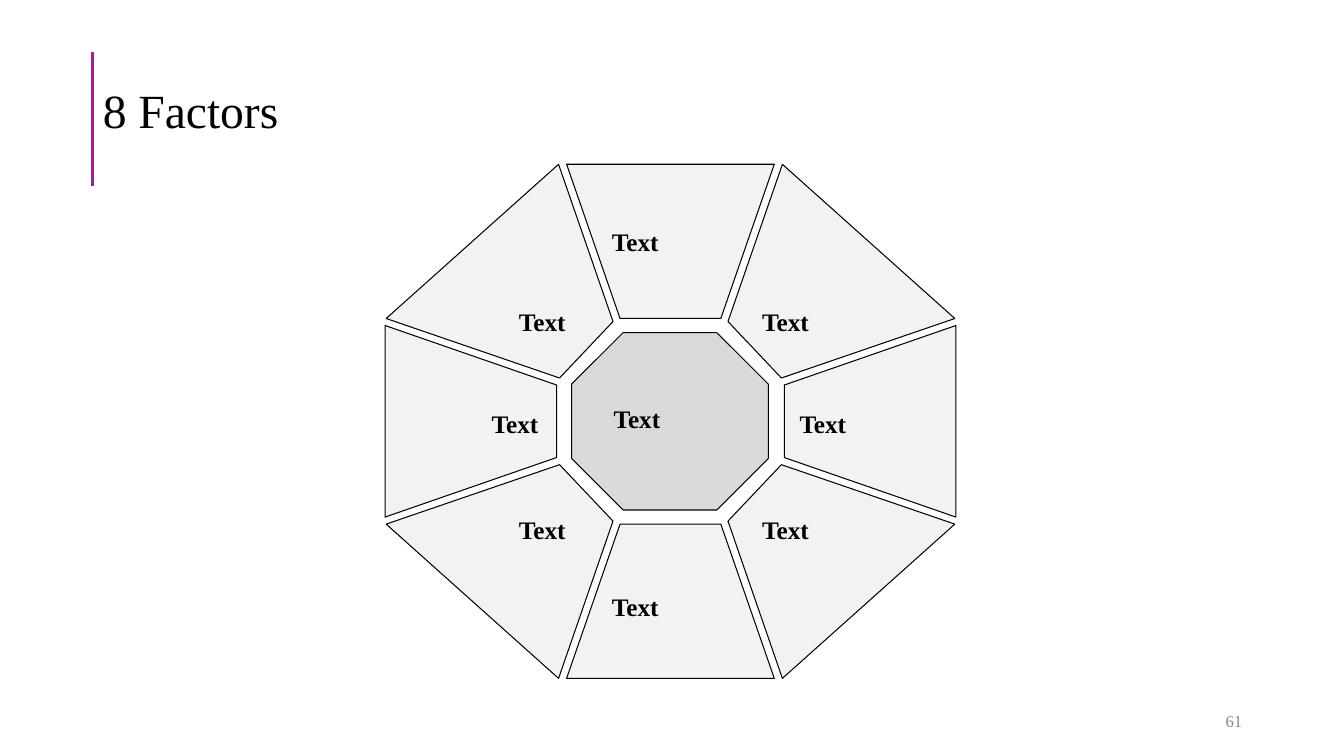
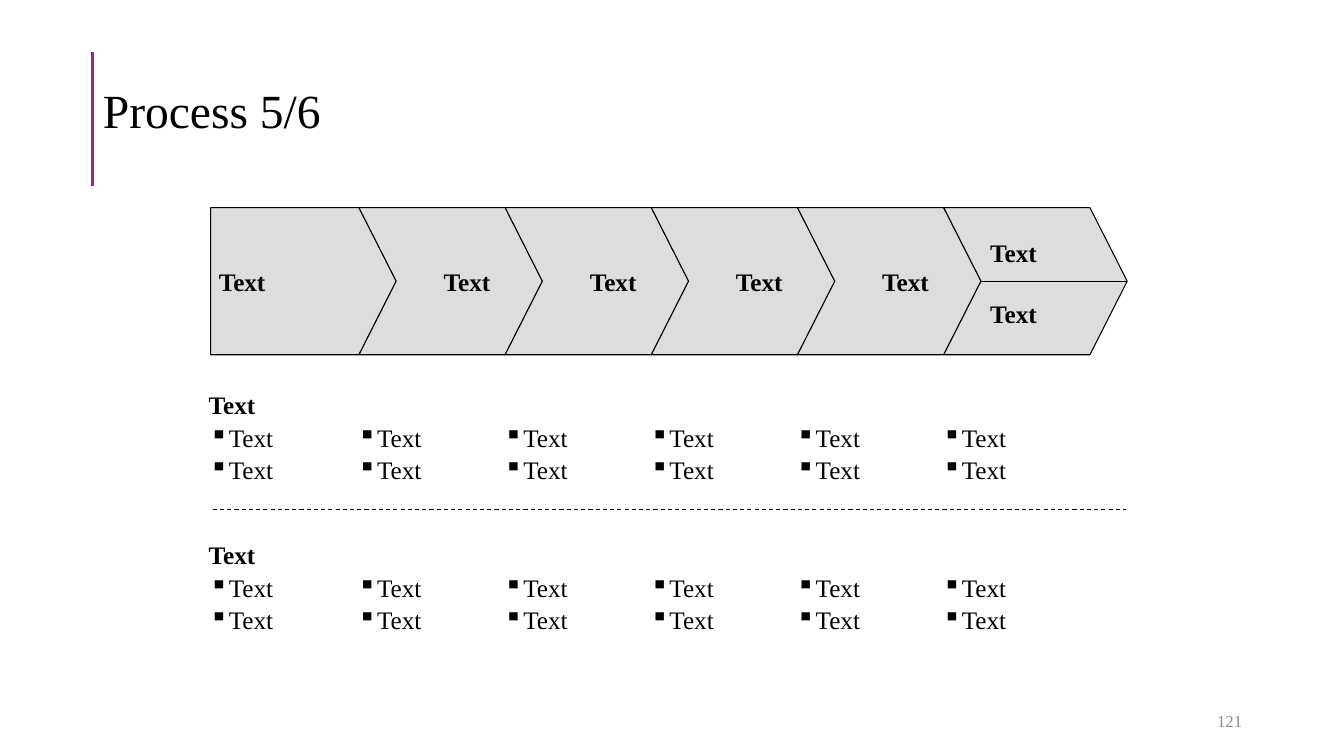
"""Builds an eight-factor wheel slide and a process slide."""
from collections import namedtuple

from lxml import etree
from pptx import Presentation
from pptx.dml.color import RGBColor
from pptx.enum.dml import MSO_LINE
from pptx.enum.shapes import MSO_CONNECTOR, MSO_SHAPE
from pptx.enum.text import MSO_ANCHOR, PP_ALIGN
from pptx.oxml.ns import qn
from pptx.util import Pt

Box = namedtuple("Box", "left top width height")

SCALE = 9144
FONT = "Times New Roman"
INK, ACCENT, MUTED = "000000", "92278F", "8C8C8C"
PALE, MID, STAGE = "F2F2F2", "D9D9D9", "DDDDDD"
LEFT, RIGHT = PP_ALIGN.LEFT, PP_ALIGN.RIGHT
TOP, MIDDLE = MSO_ANCHOR.TOP, MSO_ANCHOR.MIDDLE
OCTAGON, PENTAGON, CHEVRON = MSO_SHAPE.OCTAGON, MSO_SHAPE.PENTAGON, MSO_SHAPE.CHEVRON
STRAIGHT, DASH = MSO_CONNECTOR.STRAIGHT, MSO_LINE.DASH
TITLE_ONLY = 5

TITLE_BOX = Box(92, 40, 1150, 145)
NUMBER_BOX = Box(942, 695, 300, 40)
WHEEL_BOX = Box(382, 163, 566, 510)
PROCESS_BOX = Box(209, 206, 908, 146)
LISTS_BOX = Box(208, 386, 909, 233)

CORNER = [(-110, -43), (-57, -99), (-111, -255), (-282, -102)]
CAP = [(-50, -102), (50, -102), (103, -255), (-103, -255)]
SIDE = [(-283, -95), (-113, -36), (-113, 36), (-283, 95)]
SECTORS = [
    (CORNER, 1, 1), (CORNER, -1, 1), (CORNER, 1, -1), (CORNER, -1, -1),
    (CAP, 1, 1), (CAP, 1, -1), (SIDE, 1, 1), (SIDE, -1, 1),
]
SECTOR_LABELS = [
    (-58, -193, LEFT), (-58, 169, LEFT), (-247, -13, RIGHT), (128, -13, LEFT),
    (-220, -114, RIGHT), (91, -114, LEFT), (-220, 92, RIGHT), (91, 92, LEFT),
]


def px(length):
    """Turn px into EMU."""
    return int(length * SCALE)


def place(box):
    """Return the four EMU lengths of a box."""
    return [px(length) for length in box]


def color(code):
    """Return the colour of a hex string."""
    return RGBColor.from_string(code)


def write(shape, lines, size=18, ink=INK, bold=False, align=LEFT, anchor=TOP, insets=(0, 0, 0, 0)):
    """Set and format the text of a shape and return its paragraphs."""
    frame = shape.text_frame
    frame.text = "\n".join(lines)
    frame.word_wrap = True
    frame.vertical_anchor = anchor
    frame.margin_left, frame.margin_top, frame.margin_right, frame.margin_bottom = place(insets)
    for para in frame.paragraphs:
        para.alignment = align
        for span in para.runs:
            span.font.name = FONT
            span.font.size = Pt(size)
            span.font.bold = bold
            span.font.color.rgb = color(ink)
    return frame.paragraphs


def add_label(page, box, text="Text", **style):
    """Add a text box."""
    write(page.shapes.add_textbox(*place(box)), [text], **style)


def paint(shape, fill):
    """Give a shape a flat fill and a thin outline."""
    shape.shadow.inherit = False
    shape.fill.solid()
    shape.fill.fore_color.rgb = color(fill)
    shape.line.color.rgb = color(INK)
    shape.line.width = Pt(0.75)


def add_line(page, start, end, ink=INK, width=0.75, dash=None):
    """Add a straight line without shadow."""
    line = page.shapes.add_connector(STRAIGHT, *place(start + end))
    line.line.color.rgb = color(ink)
    line.line.width = Pt(width)
    if dash:
        line.line.dash_style = dash
    etree.SubElement(line._element.spPr, qn("a:effectLst"))


def add_page(deck, title, number):
    """Add a slide with accent rule, title and page number."""
    page = deck.slides.add_slide(deck.slide_layouts[TITLE_ONLY])
    add_line(page, (92, 52), (92, 185), ACCENT, 2.25)
    heading = page.shapes.title
    heading.left, heading.top, heading.width, heading.height = place(TITLE_BOX)
    write(heading, [title], size=34, anchor=MIDDLE, insets=(10, 5, 10, 5))[0].line_spacing = 0.9
    add_label(page, NUMBER_BOX, number, size=12, ink=MUTED, align=RIGHT,
              anchor=MIDDLE, insets=(10, 5, 10, 5))
    return page


def add_wheel(page, box):
    """Draw eight mirrored sectors around an octagonal hub."""
    center_x, center_y = box.left + box.width // 2, box.top + box.height // 2
    for outline, flip_x, flip_y in SECTORS:
        points = [(center_x + flip_x * x, center_y + flip_y * y) for x, y in outline]
        builder = page.shapes.build_freeform(*points[0], scale=SCALE)
        builder.add_line_segments(points[1:], close=True)
        paint(builder.convert_to_shape(), PALE)
    hub = page.shapes.add_shape(OCTAGON, *place((center_x - 98, center_y - 88, 195, 176)))
    hub.adjustments[0] = 0.29
    paint(hub, MID)
    write(hub, ["Text"], bold=True, anchor=MIDDLE, insets=(16, 0, 0, 5))
    for x, y, align in SECTOR_LABELS:
        add_label(page, Box(center_x + x, center_y + y, 116, 24), bold=True, align=align)


def add_process(page, box):
    """Draw interlocking stages, the last one split, and return their left edges."""
    first_width, width, point = 184, 182, 37
    lefts = [box.left] + [box.left + first_width - point + step * (width - point) for step in range(5)]
    for left in lefts:
        is_first, is_last = left == lefts[0], left == lefts[-1]
        kind = PENTAGON if is_first else CHEVRON
        stage_box = Box(left, box.top, first_width if is_first else width, box.height)
        stage = page.shapes.add_shape(kind, *place(stage_box))
        stage.adjustments[0] = point / box.height
        paint(stage, STAGE)
        if not is_last:
            inset = 8 if is_first else 47
            write(stage, ["Text"], bold=True, anchor=MIDDLE, insets=(inset, 0, 0, 0))
    middle = box.top + box.height // 2
    add_line(page, (lefts[-1] + point, middle), (lefts[-1] + width, middle))
    for top in (middle - 44, middle + 17):
        add_label(page, Box(lefts[-1] + 46, top, 51, 23), bold=True)
    return lefts


def add_bullets(page, box):
    """Add a text box with two square bullets."""
    for para in write(page.shapes.add_textbox(*place(box)), ["Text", "Text"]):
        para.level = 1
        para.space_after = Pt(1)
        properties = para._p.get_or_add_pPr()
        properties.set("marL", str(px(19)))
        properties.set("indent", str(px(-19)))
        etree.SubElement(properties, qn("a:buChar")).set("char", "▪")


def add_lists(page, box, lefts):
    """Add two headed rows of bullet lists with a dashed rule between them."""
    for top in (box.top, box.top + 149):
        add_label(page, Box(box.left - 1, top, 51, 30), bold=True)
        for left in lefts:
            add_bullets(page, Box(left - 1, top + 33, 134, 51))
    rule = box.top + 119
    add_line(page, (box.left + 3, rule), (box.left + box.width, rule), dash=DASH)


def main():
    """Build and save the deck."""
    deck = Presentation()
    deck.slide_width, deck.slide_height = px(1333), px(750)
    add_wheel(add_page(deck, "8 Factors", "61"), WHEEL_BOX)
    page = add_page(deck, "Process 5/6", "121")
    add_lists(page, LISTS_BOX, add_process(page, PROCESS_BOX))
    deck.save("out.pptx")


if __name__ == "__main__":
    main()
